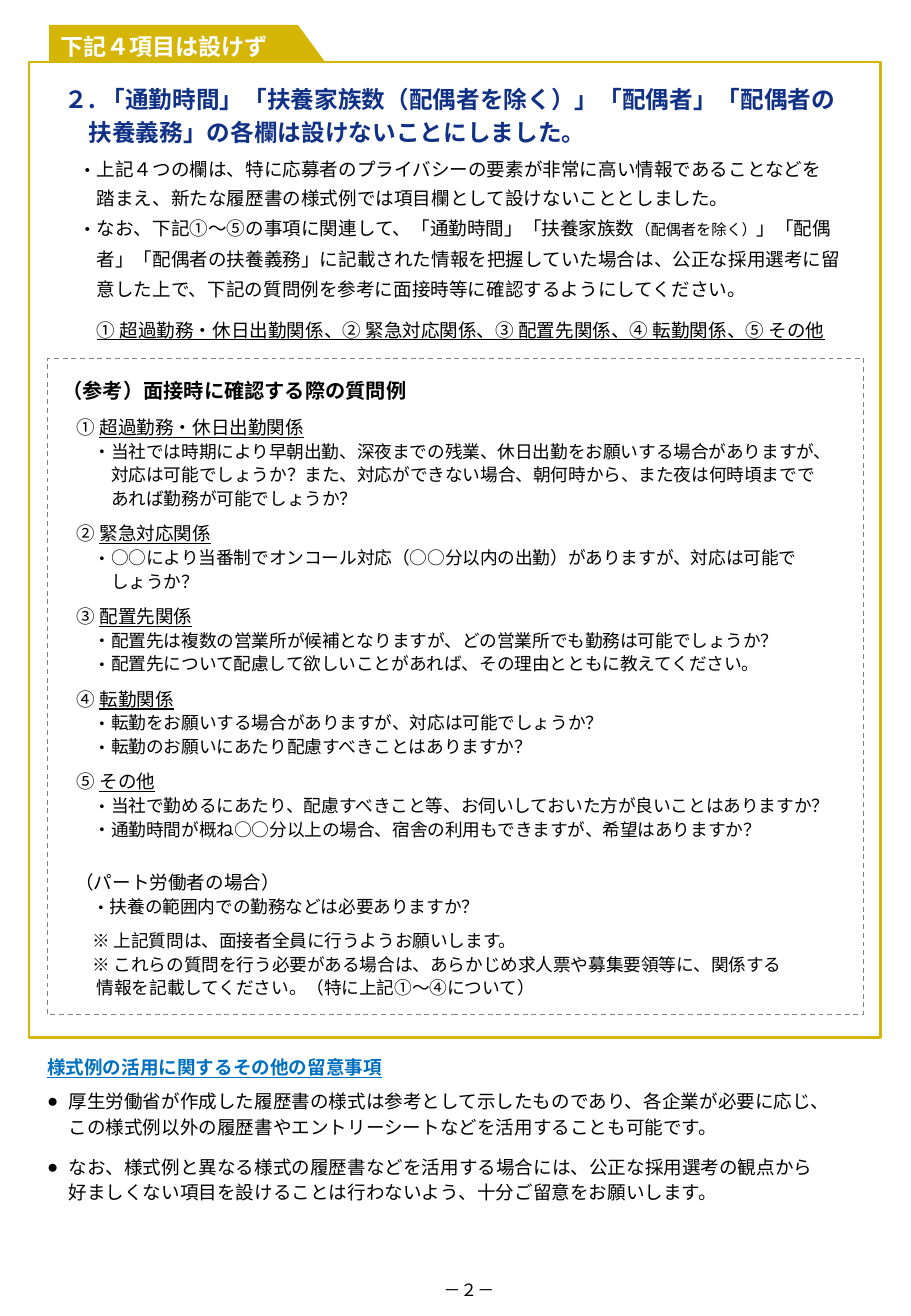
"""Build the page on the four items left out of the résumé form."""
from dataclasses import dataclass
from typing import NamedTuple, Optional

from lxml.etree import SubElement
from pptx import Presentation
from pptx.dml.color import RGBColor
from pptx.enum.dml import MSO_LINE
from pptx.enum.shapes import MSO_SHAPE
from pptx.enum.text import MSO_ANCHOR, MSO_AUTO_SIZE, PP_ALIGN
from pptx.oxml.ns import qn
from pptx.slide import Slide
from pptx.text.text import Font, TextFrame
from pptx.util import Emu, Inches, Pt

FONT = "Noto Sans CJK JP"
GOLD = RGBColor(0xD5, 0xB6, 0x06)
NAVY = RGBColor(0x10, 0x31, 0x85)
BLUE = RGBColor(0x00, 0x70, 0xC0)
GRAY = RGBColor(0x80, 0x80, 0x80)
BLACK = RGBColor(0, 0, 0)
WHITE = RGBColor(0xFF, 0xFF, 0xFF)

WIDTH, HEIGHT = Inches(7.5), Inches(10.83)
COLUMNS, ROWS = 75, 108.3


class Area(NamedTuple):
    """Left, top, width and height in grid columns and rows."""
    left: float
    top: float
    width: float
    height: float


class Bullet(NamedTuple):
    """A bullet character and its typeface."""
    mark: str
    face: str


class Span(NamedTuple):
    """A run of text that differs from its paragraph."""
    text: str
    size: Optional[float] = None
    underline: Optional[bool] = None


@dataclass
class Para:
    """A paragraph with spacing in points and indents in ems."""
    spans: tuple[Span, ...]
    size: float = 10.5
    leading: Optional[float] = 14
    before: float = 0
    margin: float = 0
    hang: float = 0
    bullet: Optional[Bullet] = None
    color: RGBColor = BLACK
    bold: bool = False
    align: PP_ALIGN = PP_ALIGN.LEFT


DOT = Bullet("・", FONT)
DISC = Bullet("●", "Arial")


def col(count: float) -> Emu:
    """Turn grid columns into a length."""
    return Emu(round(WIDTH * count / COLUMNS))


def row(count: float) -> Emu:
    """Turn grid rows into a length."""
    return Emu(round(HEIGHT * count / ROWS))


def place(area: Area) -> tuple[Emu, Emu, Emu, Emu]:
    """Turn a grid area into slide lengths."""
    return col(area.left), row(area.top), col(area.width), row(area.height)


def plain(text: str, **style) -> Para:
    """Make a paragraph of one run."""
    return Para((Span(text),), **style)


def question(text: str) -> Para:
    """Make a dotted sample question."""
    return plain(text, margin=3, hang=1, bullet=DOT)


def topic(number: str, name: str) -> Para:
    """Make a numbered topic with its name underlined."""
    return Para((Span(f"{number} "), Span(name, underline=True)), 11, before=7, margin=1)


def style_font(font: Font, para: Para) -> None:
    """Apply a paragraph's typeface, size, colour and weight."""
    font.name, font.size, font.bold = FONT, Pt(para.size), para.bold
    font.color.rgb = para.color
    SubElement(font._element, qn("a:ea"), typeface=FONT)


def write(frame: TextFrame, paras: list[Para]) -> None:
    """Fill a text frame with paragraphs."""
    frame.word_wrap = True
    frame.auto_size = MSO_AUTO_SIZE.NONE
    for index, para in enumerate(paras):
        target = frame.add_paragraph() if index else frame.paragraphs[0]
        target.alignment = para.align
        if para.leading:
            target.line_spacing = Pt(para.leading)
        target.space_before = Pt(para.before)
        properties = target._p.get_or_add_pPr()
        properties.set("marL", str(Pt(para.margin * para.size)))
        properties.set("indent", str(Pt(-para.hang * para.size)))
        if para.bullet:
            SubElement(properties, qn("a:buFont"), typeface=para.bullet.face)
            SubElement(properties, qn("a:buChar"), char=para.bullet.mark)
        style_font(target.font, para)
        for span in para.spans:
            for number, line in enumerate(span.text.split("\v")):
                if number:
                    target.add_line_break()
                run = target.add_run()
                run.text = line
                if span.size:
                    run.font.size = Pt(span.size)
                if span.underline:
                    run.font.underline = True


def add_text(slide: Slide, area: Area, paras: list[Para]) -> None:
    """Add a text box."""
    write(slide.shapes.add_textbox(*place(area)).text_frame, paras)


def add_frame(slide: Slide, area: Area, color: RGBColor, weight: float,
              dash: Optional[MSO_LINE] = None) -> None:
    """Add an unfilled rectangle."""
    frame = slide.shapes.add_shape(MSO_SHAPE.RECTANGLE, *place(area))
    frame.shadow.inherit = False
    frame.fill.background()
    frame.line.color.rgb, frame.line.width = color, Pt(weight)
    if dash:
        frame.line.dash_style = dash


def add_tab(slide: Slide, para: Para) -> None:
    """Add the slanted gold tab."""
    outline = slide.shapes.build_freeform(col(4.1), row(2.1))
    outline.add_line_segments([(col(x), row(y)) for x, y in
                               ((24.5, 2.1), (26.7, 5.1), (4.1, 5.1))])
    tab = outline.convert_to_shape()
    tab.shadow.inherit = False
    tab.fill.solid()
    tab.fill.fore_color.rgb = tab.line.color.rgb = GOLD
    tab.line.width = Pt(0.75)
    frame = tab.text_frame
    frame.margin_left, frame.margin_right = col(0.85), col(1.5)
    frame.margin_top, frame.margin_bottom = row(0.4), 0
    frame.vertical_anchor = MSO_ANCHOR.MIDDLE
    write(frame, [para])


TITLE = plain("２. 「通勤時間」「扶養家族数（配偶者を除く）」「配偶者」「配偶者の\v扶養義務」の各欄は設けないことにしました。",
              size=14, leading=20, margin=2, hang=1, color=NAVY, bold=True)
EXPLANATION = [
    plain("上記４つの欄は、特に応募者のプライバシーの要素が非常に高い情報であることなどを\v"
          "踏まえ、新たな履歴書の様式例では項目欄として設けないこととしました。",
          size=11, leading=17, margin=3, hang=1, bullet=DOT),
    Para((Span("なお、下記①～⑤の事項に関連して、「通勤時間」「扶養家族数"), Span("（配偶者を除く）", size=9),
          Span("」「配偶\v者」「配偶者の扶養義務」に記載された情報を把握していた場合は、公正な採用選考に留\v"
               "意した上で、下記の質問例を参考に面接時等に確認するようにしてください。")),
         11, leading=18, margin=3, hang=1, bullet=DOT),
    Para((Span("① 超過勤務・休日出勤関係、② 緊急対応関係、③ 配置先関係、④ 転勤関係、⑤ その他", underline=True),),
         11, leading=20, before=4, margin=3),
]
QUESTIONS = [
    plain("（参考）面接時に確認する際の質問例", size=12, margin=0.22, bold=True),
    topic("①", "超過勤務・休日出勤関係"),
    question("当社では時期により早朝出勤、深夜までの残業、休日出勤をお願いする場合がありますが、\v"
             "対応は可能でしょうか？また、対応ができない場合、朝何時から、また夜は何時頃までで\vあれば勤務が可能でしょうか？"),
    topic("②", "緊急対応関係"),
    question("○○により当番制でオンコール対応（○○分以内の出勤）がありますが、対応は可能で\vしょうか？"),
    topic("③", "配置先関係"),
    question("配置先は複数の営業所が候補となりますが、どの営業所でも勤務は可能でしょうか？"),
    question("配置先について配慮して欲しいことがあれば、その理由とともに教えてください。"),
    topic("④", "転勤関係"),
    question("転勤をお願いする場合がありますが、対応は可能でしょうか？"),
    question("転勤のお願いにあたり配慮すべきことはありますか？"),
    topic("⑤", "その他"),
    question("当社で勤めるにあたり、配慮すべきこと等、お伺いしておいた方が良いことはありますか？"),
    question("通勤時間が概ね○○分以上の場合、宿舎の利用もできますが、希望はありますか？"),
]
PART_TIME = [
    plain("（パート労働者の場合）", size=11, margin=1),
    question("扶養の範囲内での勤務などは必要ありますか？"),
    plain("※ 上記質問は、面接者全員に行うようお願いします。", before=6, margin=2.25, hang=0.25),
    plain("※ これらの質問を行う必要がある場合は、あらかじめ求人票や募集要領等に、関係する\v"
          "情報を記載してください。（特に上記①～④について）", margin=2.25, hang=0.25),
]
NOTES = [
    Para((Span("様式例の活用に関するその他の留意事項", underline=True),), 11, leading=20, color=BLUE, bold=True),
    plain("厚生労働省が作成した履歴書の様式は参考として示したものであり、各企業が必要に応じ、\v"
          "この様式例以外の履歴書やエントリーシートなどを活用することも可能です。",
          size=11, leading=15, before=5, margin=1.15, hang=1.15, bullet=DISC),
    plain("なお、様式例と異なる様式の履歴書などを活用する場合には、公正な採用選考の観点から\v"
          "好ましくない項目を設けることは行わないよう、十分ご留意をお願いします。",
          size=11, leading=15, before=9, margin=1.15, hang=1.15, bullet=DISC),
]


def main() -> None:
    """Compose and save the page."""
    deck = Presentation()
    deck.slide_width, deck.slide_height = WIDTH, HEIGHT
    slide = deck.slides.add_slide(deck.slide_layouts[5])
    title = slide.shapes.title
    title.left, title.top, title.width, title.height = place(Area(2.4, 6, 69.6, 6.6))
    title.text_frame.vertical_anchor = MSO_ANCHOR.TOP
    write(title.text_frame, [TITLE])
    add_frame(slide, Area(2.4, 5.1, 70.1, 80.3), GOLD, 1.5)
    add_tab(slide, plain("下記４項目は設けず", size=13.7, leading=None, color=WHITE, bold=True))
    add_frame(slide, Area(3.9, 29.5, 67.2, 54), GRAY, 0.75, MSO_LINE.DASH)
    add_text(slide, Area(2.4, 12, 69.6, 16.7), EXPLANATION)
    add_text(slide, Area(3.8, 30.7, 68.9, 39.3), QUESTIONS)
    add_text(slide, Area(3.7, 71.1, 67.4, 11.7), PART_TIME)
    add_text(slide, Area(2.9, 85.5, 70, 14.5), NOTES)
    add_text(slide, Area(35, 104.8, 7.2, 2.7),
             [plain("－２－", size=10, leading=None, align=PP_ALIGN.CENTER)])
    deck.save("out.pptx")


if __name__ == "__main__":
    main()
